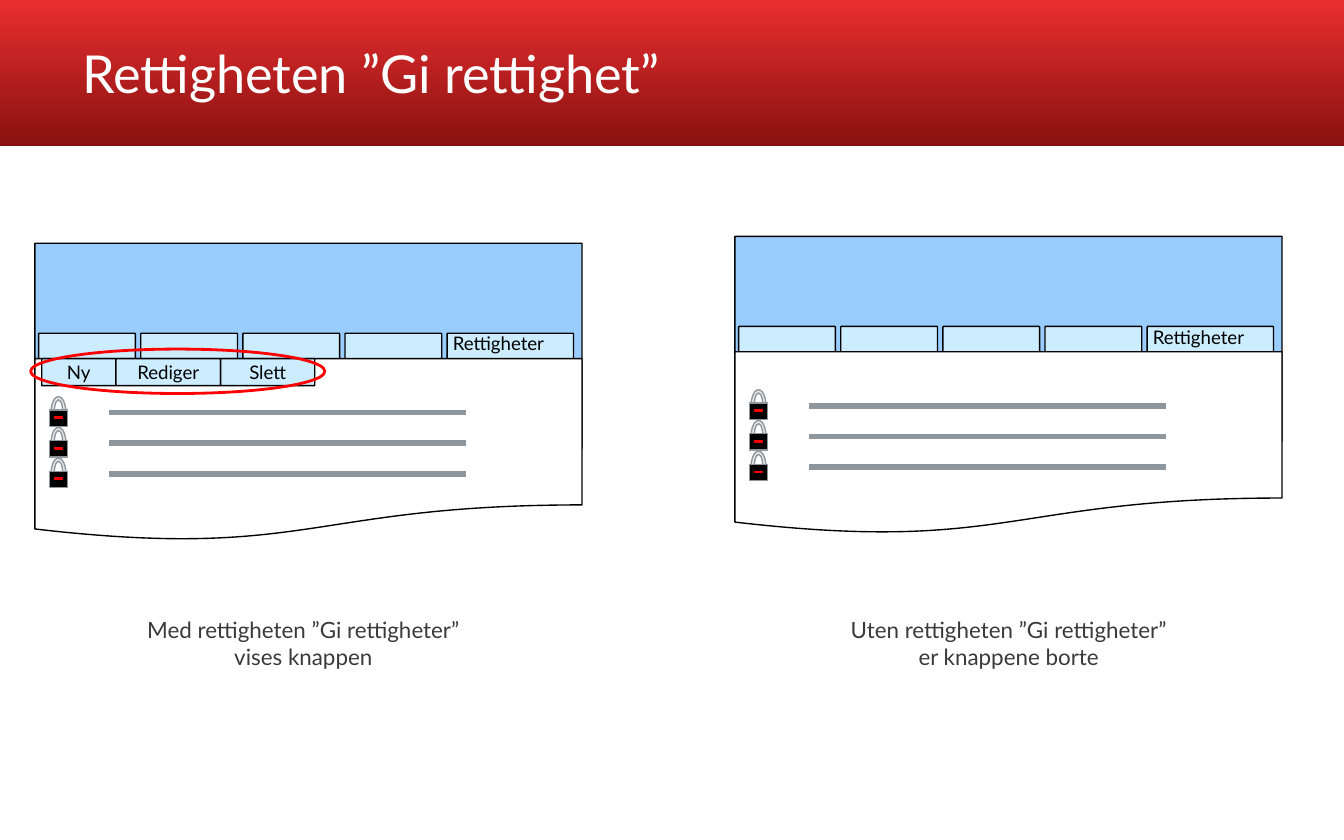
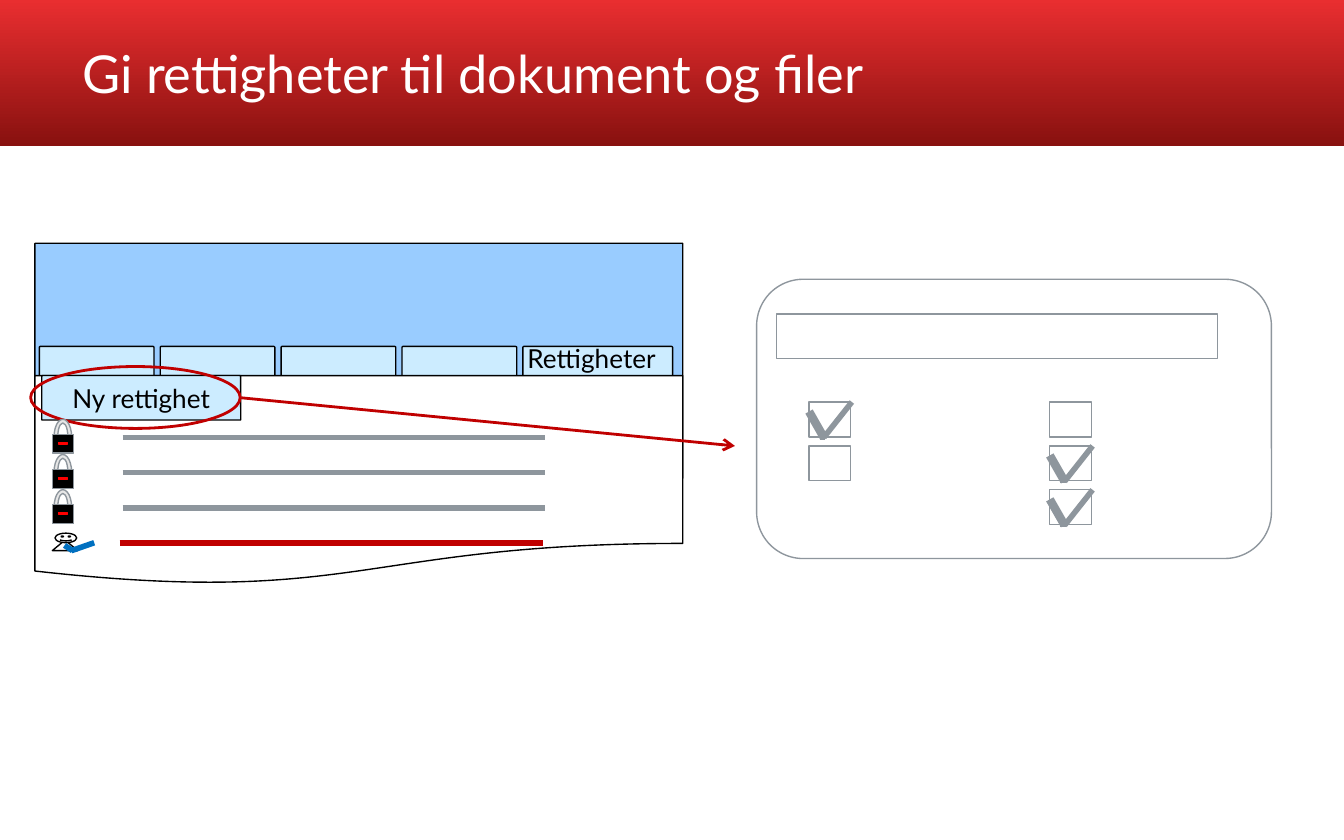
from lxml.etree import SubElement
from pptx import Presentation
from pptx.dml.color import RGBColor
from pptx.enum.shapes import MSO_CONNECTOR, MSO_SHAPE
from pptx.enum.text import MSO_ANCHOR, PP_ALIGN
from pptx.oxml.ns import qn
from pptx.util import Cm, Pt

BLACK, WHITE, GREY = "000000", "FFFFFF", "8E969D"
HEADER_BLUE, TAB_BLUE, PEN_BLUE = "99CCFF", "CCECFF", "0070C0"
RED, DARK_RED = "FF0000", "C00000"
CAPTION_GREY, SHACKLE_GREY = "3A3A3A", "E7E7E7"
TITLE_BOX = {"left": Cm(1.3), "top": Cm(0.56), "width": Cm(18), "height": Cm(1.63)}


def draw(shapes, kind, box, fill=None, line=None, line_width=0.75, text="",
         size=10, color=BLACK, align=PP_ALIGN.CENTER):
    """Draw a preset shape, or a text box when kind is None; box is in cm."""
    lengths = [Cm(value) for value in box]
    if kind is None:
        shape = shapes.add_textbox(*lengths)
    else:
        shape = shapes.add_shape(kind, *lengths)
        shape.shadow.inherit = False
        if kind == MSO_SHAPE.ROUND_2_SAME_RECTANGLE:
            shape.adjustments[0] = 0.024
    if fill:
        shape.fill.solid()
        shape.fill.fore_color.rgb = RGBColor.from_string(fill)
    else:
        shape.fill.background()
    if line:
        shape.line.color.rgb = RGBColor.from_string(line)
        shape.line.width = Pt(line_width)
    else:
        shape.line.fill.background()
    if text:
        frame = shape.text_frame
        frame.text = text
        frame.word_wrap = True
        frame.vertical_anchor = MSO_ANCHOR.MIDDLE
        for paragraph in frame.paragraphs:
            paragraph.alignment = align
            for name, value in {"name": "Lato", "size": Pt(size)}.items():
                setattr(paragraph.font, name, value)
            paragraph.font.color.rgb = RGBColor.from_string(color)
    return shape


def draw_line(shapes, ends, color, width):
    """Draw a straight line between ends (x1, y1, x2, y2) in cm."""
    line = shapes.add_connector(MSO_CONNECTOR.STRAIGHT, *[Cm(value) for value in ends])
    line.line.color.rgb = RGBColor.from_string(color)
    line.line.width = Pt(width)
    SubElement(line.element.spPr, qn("a:effectLst"))
    return line


prs = Presentation()
prs.slide_width, prs.slide_height = Cm(25.4), Cm(15.88)
layout = prs.slide_layouts[5]
for name, value in TITLE_BOX.items():
    setattr(layout.placeholders[0], name, value)

slides = []
for heading in ("Rettigheten ”Gi rettighet”", "Gi rettigheter til dokument og filer"):
    slide = prs.slides.add_slide(layout)
    title = slide.shapes.title
    title.text_frame.text = heading
    title.text_frame.vertical_anchor = MSO_ANCHOR.MIDDLE
    paragraph = title.text_frame.paragraphs[0]
    paragraph.alignment = PP_ALIGN.LEFT
    for name, value in {"name": "Lato", "size": Pt(28)}.items():
        setattr(paragraph.font, name, value)
    paragraph.font.color.rgb = RGBColor.from_string(WHITE)
    slides.append(slide)
rights_slide, grant_slide = slides

# The red band belongs to the layout, behind its placeholders
band = draw(rights_slide.shapes, MSO_SHAPE.RECTANGLE, (0, 0, 25.4, 2.77))
band.fill.gradient()
band.fill.gradient_angle = 270
for stop, color in zip(band.fill.gradient_stops, ("E92E30", "88110F")):
    stop.color.rgb = RGBColor.from_string(color)
layout.shapes.element.insert(2, band.element)

# Application windows: one design, stretched by scale_x and scale_y
windows = [
    {"slide": rights_slide, "at": (0.66, 4.6), "scale": (1, 1), "size": 10,
     "buttons": [("Ny", 1.4), ("Rediger", 1.98), ("Slett", 1.78)], "button_height": 0.51,
     "highlight": (0.58, 6.6, 5.56, 0.84), "highlight_color": RED},
    {"slide": rights_slide, "at": (13.89, 4.47), "scale": (1, 1), "size": 10, "buttons": []},
    {"slide": grant_slide, "at": (0.66, 4.6), "scale": (1.184, 1.147), "size": 14,
     "buttons": [("Ny rettighet", 3.76)], "button_height": 0.84,
     "highlight": (0.58, 6.93, 3.96, 1.17), "highlight_color": DARK_RED},
]
for window in windows:
    shapes = window["slide"].shapes
    left, top = window["at"]
    scale_x, scale_y = window["scale"]

    # (kind, x, y, width, height, fill) relative to the window
    parts = [(MSO_SHAPE.FLOWCHART_DOCUMENT, 0, 0, 10.34, 4.83, HEADER_BLUE)]
    for tab in range(5):
        tab_width = 2.39 if tab == 4 else 1.83
        parts.append((MSO_SHAPE.ROUND_2_SAME_RECTANGLE,
                      0.07 + tab * 1.93, 1.7, tab_width, 0.71, TAB_BLUE))
    parts.append((MSO_SHAPE.FLOWCHART_DOCUMENT, 0, 2.18, 10.34, 3.45, WHITE))
    for kind, x, y, width, height, fill in parts:
        draw(shapes, kind, (left + x * scale_x, top + y * scale_y,
                            width * scale_x, height * scale_y), fill, BLACK)
    draw(shapes, None, (left + 7.65 * scale_x, top + 1.55 * scale_y,
                        2.79 * scale_x, 0.69 * scale_y),
         text="Rettigheter", size=window["size"], align=PP_ALIGN.LEFT)

    button_left = left + 0.13
    for label, width in window["buttons"]:
        draw(shapes, MSO_SHAPE.ROUND_2_SAME_RECTANGLE,
             (button_left, top + 2.18 * scale_y, width, window["button_height"]),
             TAB_BLUE, BLACK, text=label, size=window["size"])
        button_left += width
    if window["buttons"]:
        draw(shapes, MSO_SHAPE.OVAL, window["highlight"],
             line=window["highlight_color"], line_width=1.5)

    for row in range(3):
        row_top = top + row * 0.58 * scale_y
        line_y = row_top + 3.2 * scale_y
        draw_line(shapes, (left + 1.4 * scale_x, line_y, left + 8.15 * scale_x, line_y), GREY, 3)
        lock = shapes.add_group_shape().shapes
        arc_width, arc_height = 0.58 * scale_y, 0.28 * scale_x
        shackle = draw(lock, MSO_SHAPE.BLOCK_ARC,
                       (left + 0.445 * scale_x - arc_width / 2,
                        row_top + 3.19 * scale_y - arc_height / 2, arc_width, arc_height),
                       SHACKLE_GREY, GREY)
        shackle.rotation = 90
        for index, value in enumerate((30.303, 185.245, 0.212)):
            shackle.adjustments[index] = value
        for x, y, width, height, fill, line in (
                (0.28, 3.15, 0.34, 0.31, BLACK, GREY), (0.38, 3.28, 0.14, 0.03, RED, RED)):
            draw(lock, MSO_SHAPE.RECTANGLE,
                 (left + x * scale_x, row_top + y * scale_y, width * scale_x, height * scale_y),
                 fill, line)

captions = [
    ("Med rettigheten ”Gi rettigheter”\nvises knappen", 0.58, 10.31),
    ("Uten rettigheten ”Gi rettigheter”\ner knappene borte", 14.1, 9.93),
]
for caption, left, width in captions:
    draw(rights_slide.shapes, None, (left, 11.25, width, 1.83),
         text=caption, size=12, color=CAPTION_GREY)

# Dialog with a search field and tick boxes
shapes = grant_slide.shapes
draw(shapes, MSO_SHAPE.ROUNDED_RECTANGLE, (14.3, 5.28, 9.73, 5.28), line=GREY)
draw(shapes, MSO_SHAPE.RECTANGLE, (14.68, 5.94, 8.33, 0.84), line=GREY)
for column_left, ticks in ((15.29, (True, False)), (19.84, (False, True, True))):
    for row, ticked in enumerate(ticks):
        row_top = 7.6 + row * 0.83
        draw(shapes, MSO_SHAPE.RECTANGLE, (column_left, row_top, 0.79, 0.66), line=GREY)
        if ticked:
            tick = shapes.add_group_shape().shapes
            for x1, y1, x2, y2, width in ((0, 0.18, 0.28, 0.67, 4.5),
                                          (0.28, 0.67, 0.81, 0, 3),
                                          (0.3, 0.67, 0.2, 0.67, 2.25)):
                draw_line(tick, (column_left + x1, row_top + y1,
                                 column_left + x2, row_top + y2), GREY, width)

# The new right: a user with a pen, and the row it adds
draw_line(shapes, (2.26, 10.26, 10.26, 10.26), DARK_RED, 3)
user = shapes.add_group_shape().shapes
draw(user, MSO_SHAPE.ISOSCELES_TRIANGLE, (0.99, 10.21, 0.48, 0.2), WHITE, BLACK)
draw(user, MSO_SHAPE.SMILEY_FACE, (1.04, 10.08, 0.41, 0.18), WHITE, BLACK)
for ends in ((1.22, 10.31, 1.37, 10.41), (1.35, 10.41, 1.78, 10.26)):
    draw_line(user, ends, PEN_BLUE, 3)

dialog_arrow = draw_line(shapes, (4.56, 7.52, 13.89, 8.43), DARK_RED, 1.5)
SubElement(dialog_arrow.element.spPr.find(qn("a:ln")), qn("a:tailEnd"), type="arrow")

prs.save("out.pptx")
